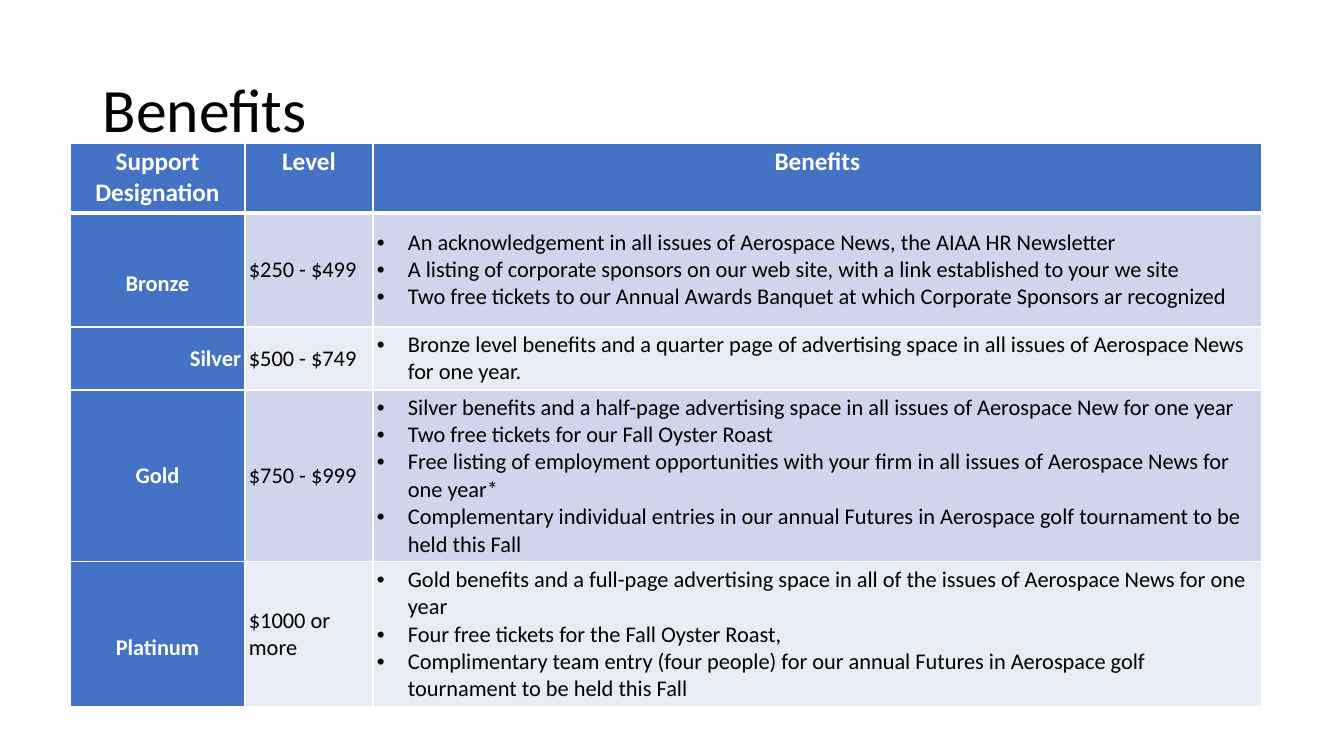
from dataclasses import dataclass

from lxml.etree import SubElement
from pptx import Presentation
from pptx.dml.color import RGBColor
from pptx.enum.text import MSO_ANCHOR as Anchor, PP_ALIGN as Align
from pptx.oxml.ns import qn
from pptx.util import Emu, Pt

EMU_PER_PX = 12192000 / 1344


@dataclass(frozen=True)
class Theme:
    font: str = "Calibri"
    ink: str = "000000"
    white: str = "FFFFFF"
    accent: str = "4472C4"
    bands: tuple[str, str] = ("CFD5EA", "E9EBF5")
    title_size: int = 44
    header_size: int = 18
    body_size: int = 16
    rule: int = 1
    header_rule: int = 3


@dataclass(frozen=True)
class Tier:
    name: str
    level: str
    benefits: tuple[str, ...]
    height: int
    align: Align = Align.CENTER
    drop: int = 0


THEME = Theme()
INSET = 4
BULLET_INDENT = 31
COLUMN_WIDTHS = (175, 128, 889)
HEADER_HEIGHT = 70
HEADINGS = ("Support Designation", "Level", "Benefits")
TIERS = (
    Tier("Bronze", "$250 - $499", (
        "An acknowledgement in all issues of Aerospace News, the AIAA HR Newsletter",
        "A listing of corporate sponsors on our web site, with a link established to your we site",
        "Two free tickets to our Annual Awards Banquet at which Corporate Sponsors ar recognized",
    ), 114, drop=27),
    Tier("Silver", "$500 - $749", (
        "Bronze level benefits and a quarter page of advertising space in all issues of "
        "Aerospace News for one year.",
    ), 63, align=Align.RIGHT),
    Tier("Gold", "$750 - $999", (
        "Silver benefits and a half-page advertising space in all issues of Aerospace New for one year",
        "Two free tickets for our Fall Oyster Roast",
        "Free listing of employment opportunities with your firm in all issues of "
        "Aerospace News for one year*",
        "Complementary individual entries in our annual Futures in Aerospace golf tournament "
        "to be held this Fall",
    ), 172),
    Tier("Platinum", "$1000 or more", (
        "Gold benefits and a full-page advertising space in all of the issues of "
        "Aerospace News for one year",
        "Four free tickets for the Fall Oyster Roast,",
        "Complimentary team entry (four people) for our annual Futures in Aerospace golf "
        "tournament to be held this Fall",
    ), 145, drop=27),
)


def px(length: int) -> Emu:
    return Emu(round(length * EMU_PER_PX))


def write(frame, *lines: str, size: int = THEME.body_size, color: str = THEME.ink,
          bold: bool = False, align: Align = Align.LEFT, after: int = 0,
          spacing: float = 1.0, bullets: bool = False) -> None:
    frame.word_wrap = True
    for index, line in enumerate(lines):
        paragraph = frame.add_paragraph() if index else frame.paragraphs[0]
        if bullets:
            properties = paragraph._p.get_or_add_pPr()
            properties.set("marL", str(px(BULLET_INDENT)))
            properties.set("indent", str(-px(BULLET_INDENT)))
            SubElement(properties, qn("a:buFont"), typeface="Arial")
            SubElement(properties, qn("a:buChar"), char="•")
        paragraph.alignment = align
        paragraph.line_spacing = spacing
        paragraph.space_after = Pt(after)
        run = paragraph.add_run()
        run.text = line
        run.font.name = THEME.font
        run.font.size = Pt(size)
        run.font.bold = bold
        run.font.color.rgb = RGBColor.from_string(color)


def style_cell(cell, fill: str, anchor: Anchor = Anchor.MIDDLE, drop: int = 0,
               top: int = THEME.rule, bottom: int = THEME.rule) -> None:
    cell.margin_left = cell.margin_right = cell.margin_bottom = px(INSET)
    cell.margin_top = px(INSET + drop)
    cell.vertical_anchor = anchor
    properties = cell._tc.get_or_add_tcPr()
    for side, width in (("L", THEME.rule), ("R", THEME.rule), ("T", top), ("B", bottom)):
        edge = SubElement(properties, qn(f"a:ln{side}"), w=str(Pt(width)))
        SubElement(SubElement(edge, qn("a:solidFill")), qn("a:srgbClr"), val=THEME.white)
    cell.fill.solid()
    cell.fill.fore_color.rgb = RGBColor.from_string(fill)


def add_title(slide) -> None:
    title = slide.shapes.add_textbox(px(93), px(40), px(1159), px(146)).text_frame
    title.vertical_anchor = Anchor.MIDDLE
    write(title, "Benefits", size=THEME.title_size, spacing=0.9)


def add_benefits_table(slide) -> None:
    heights = (HEADER_HEIGHT, *(tier.height for tier in TIERS))
    table = slide.shapes.add_table(
        len(heights), len(COLUMN_WIDTHS), px(70), px(143),
        px(sum(COLUMN_WIDTHS)), px(sum(heights))).table
    for column, width in zip(table.columns, COLUMN_WIDTHS):
        column.width = px(width)
    for row, height in zip(table.rows, heights):
        row.height = px(height)

    for column, heading in enumerate(HEADINGS):
        cell = table.cell(0, column)
        style_cell(cell, THEME.accent, Anchor.TOP, bottom=THEME.header_rule)
        write(cell.text_frame, heading, size=THEME.header_size, color=THEME.white,
              bold=True, align=Align.CENTER, after=6)

    for row, tier in enumerate(TIERS, start=1):
        name, level, benefits = (table.cell(row, column) for column in range(3))
        band = THEME.bands[(row - 1) % 2]
        top = THEME.header_rule if row == 1 else THEME.rule
        style_cell(name, THEME.accent, drop=tier.drop, top=top)
        style_cell(level, band, top=top)
        style_cell(benefits, band, top=top)
        write(name.text_frame, tier.name, color=THEME.white, bold=True,
              align=tier.align, after=6)
        write(level.text_frame, tier.level, after=6)
        write(benefits.text_frame, *tier.benefits, bullets=True)


def main() -> None:
    deck = Presentation()
    deck.slide_width, deck.slide_height = px(1344), px(756)
    slide = deck.slides.add_slide(deck.slide_layouts[6])
    add_title(slide)
    add_benefits_table(slide)
    deck.save("out.pptx")


if __name__ == "__main__":
    main()
